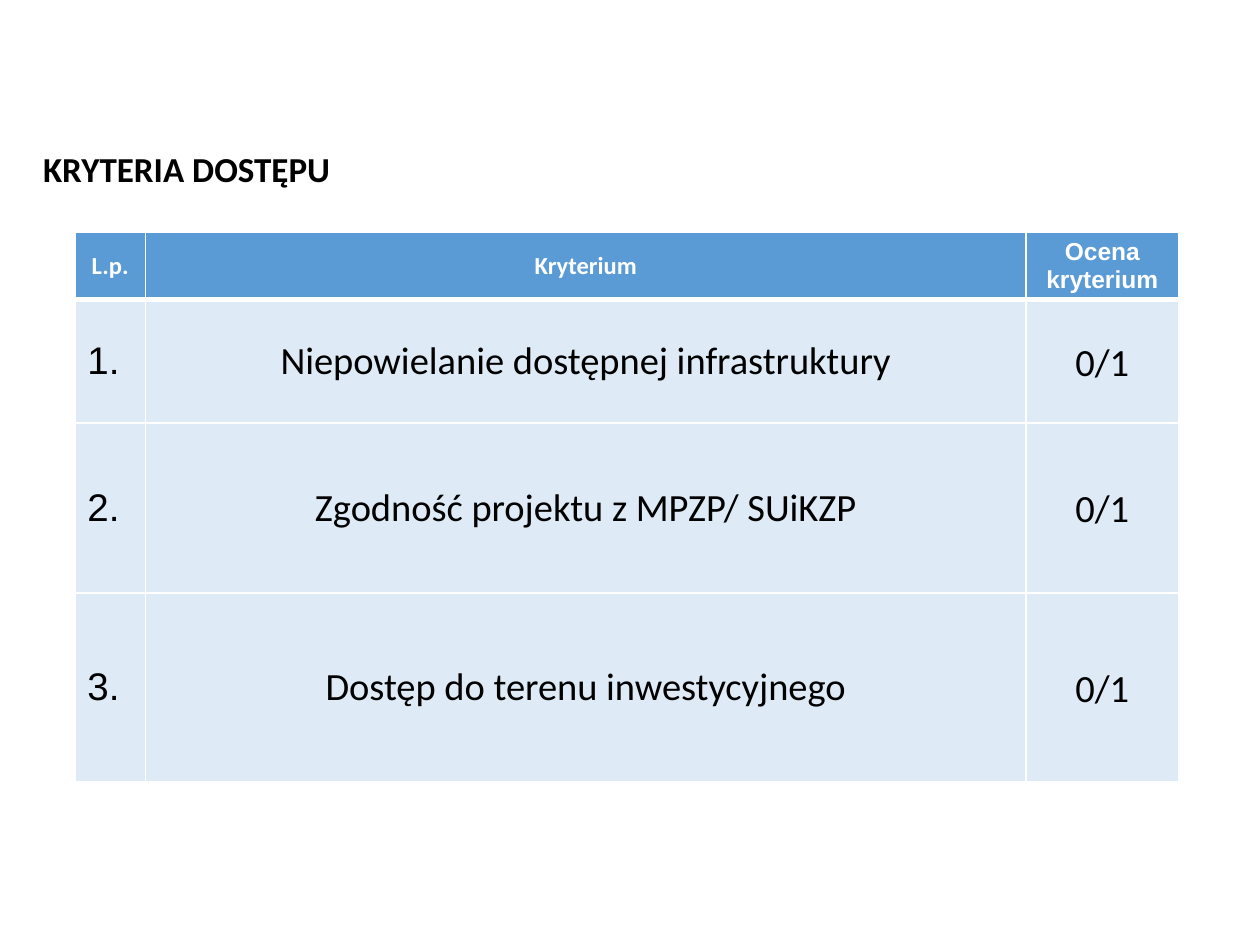
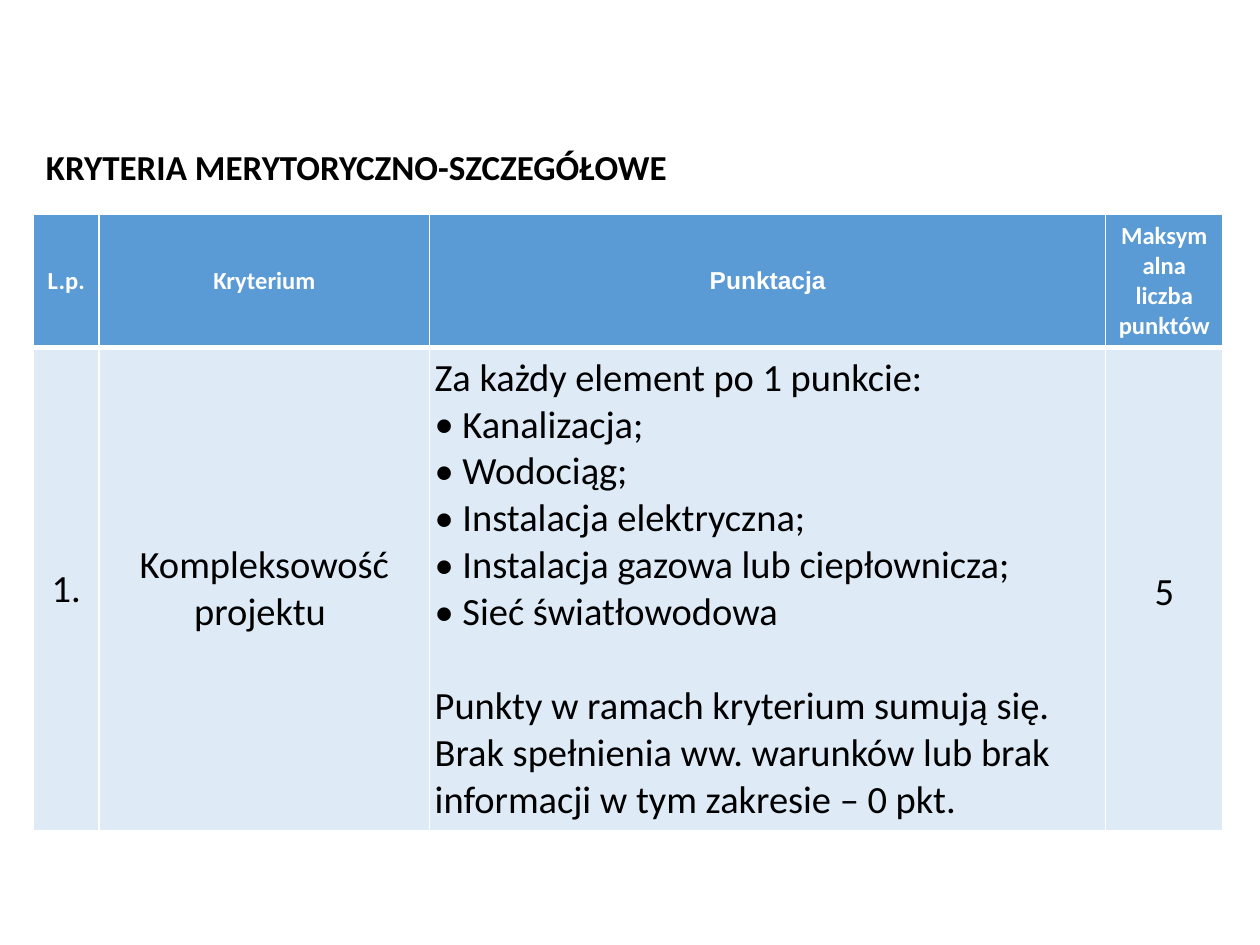
from dataclasses import dataclass

from lxml.etree import SubElement
from pptx import Presentation
from pptx.dml.color import RGBColor
from pptx.enum.text import MSO_ANCHOR as Anchor, MSO_AUTO_SIZE as AutoSize, PP_ALIGN as Align
from pptx.oxml.ns import qn
from pptx.util import Inches, Pt

COLORS = {"text": "000000", "header": "5B9BD5", "body": "DEEBF7", "line": "FFFFFF", "heading": "FFFFFF"}
SLIDE_WIDTH, SLIDE_HEIGHT = Inches(10), Inches(7.5)
GRID_COLUMNS, GRID_ROWS = 100, 75
TITLE_SIZE, HEADING_SIZE, BODY_SIZE = 20, 14, 22
TITLE_ROWS = 4.4
TIGHT_MARGIN = 0.04
BULLET_INDENT = 0.22
BLANK_LINE = 27


@dataclass
class Line:
    text: str
    bullet: bool = False
    space_before: float = 0


@dataclass
class Column:
    width: float
    heading: str
    heading_font: str = "Calibri"
    font: str = "Calibri"
    align: Align = Align.CENTER
    tight: bool = False
    spacing: float = 1.0


@dataclass
class CriteriaSlide:
    title: str
    title_at: tuple[float, float]
    title_width: float
    title_wraps: bool
    table_at: tuple[float, float]
    columns: list[Column]
    row_heights: list[float]
    rows: list[list]


def across(columns: float) -> int:
    return round(SLIDE_WIDTH * columns / GRID_COLUMNS)


def down(rows: float) -> int:
    return round(SLIDE_HEIGHT * rows / GRID_ROWS)


def write(frame, content, *, size: float, font: str = "Calibri", color: str = "text",
          bold: bool = False, align: Align = Align.LEFT, spacing: float = 1.0) -> None:
    lines = [Line(content)] if isinstance(content, str) else content
    for index, line in enumerate(lines):
        paragraph = frame.paragraphs[0] if index == 0 else frame.add_paragraph()
        if line.bullet:
            properties = paragraph._p.get_or_add_pPr()
            properties.set("marL", str(Inches(BULLET_INDENT)))
            properties.set("indent", str(-Inches(BULLET_INDENT)))
            SubElement(properties, qn("a:buFont"), typeface=font)
            SubElement(properties, qn("a:buChar"), char="•")
        paragraph.alignment = align
        paragraph.line_spacing = spacing
        if line.space_before:
            paragraph.space_before = Pt(line.space_before)
        run = paragraph.add_run()
        run.text = line.text
        run.font.size = Pt(size)
        run.font.name = font
        run.font.bold = bold
        run.font.color.rgb = RGBColor.from_string(COLORS[color])


def format_cell(cell, fill: str, bottom: float, top: float) -> None:
    properties = cell._tc.get_or_add_tcPr()
    for side, width in (("L", 1), ("R", 1), ("T", top), ("B", bottom)):
        border = SubElement(properties, qn(f"a:ln{side}"), w=str(Pt(width)))
        SubElement(SubElement(border, qn("a:solidFill")), qn("a:srgbClr"), val=COLORS["line"])
    cell.fill.solid()
    cell.fill.fore_color.rgb = RGBColor.from_string(COLORS[fill])
    cell.vertical_anchor = Anchor.MIDDLE


def add_title(slide, criteria: CriteriaSlide) -> None:
    left, top = criteria.title_at
    box = slide.shapes.add_textbox(across(left), down(top), across(criteria.title_width), down(TITLE_ROWS))
    frame = box.text_frame
    frame.word_wrap = criteria.title_wraps
    frame.auto_size = AutoSize.SHAPE_TO_FIT_TEXT
    frame.vertical_anchor = Anchor.MIDDLE
    write(frame, criteria.title, size=TITLE_SIZE, bold=True)


def add_criteria_table(slide, criteria: CriteriaSlide) -> None:
    left, top = criteria.table_at
    columns, heights = criteria.columns, criteria.row_heights
    table = slide.shapes.add_table(
        len(heights), len(columns), across(left), down(top),
        across(sum(column.width for column in columns)), down(sum(heights)),
    ).table
    table.horz_banding = False
    for row, height in zip(table.rows, heights):
        row.height = down(height)
    for index, column in enumerate(columns):
        table.columns[index].width = across(column.width)
        heading = table.cell(0, index)
        format_cell(heading, "header", bottom=3, top=1)
        write(heading.text_frame, column.heading, size=HEADING_SIZE, font=column.heading_font,
              color="heading", bold=True, align=Align.CENTER)
        for number, values in enumerate(criteria.rows, start=1):
            cell = table.cell(number, index)
            format_cell(cell, "body", bottom=1, top=3 if number == 1 else 1)
            if column.tight:
                cell.margin_left = cell.margin_right = Inches(TIGHT_MARGIN)
                cell.margin_top = cell.margin_bottom = Inches(TIGHT_MARGIN)
            write(cell.text_frame, values[index], size=BODY_SIZE, font=column.font,
                  align=column.align, spacing=column.spacing)


ACCESS = CriteriaSlide(
    title="KRYTERIA DOSTĘPU",
    title_at=(2.44, 11.2),
    title_width=37,
    title_wraps=True,
    table_at=(5.94, 18.4),
    columns=[
        Column(5.6, "L.p.", font="Arial", align=Align.LEFT),
        Column(69.9, "Kryterium"),
        Column(12.1, "Ocena kryterium", heading_font="Arial", tight=True, spacing=1.07),
    ],
    row_heights=[5.3, 9.8, 13.5, 15],
    rows=[
        [f"{number}.", name, "0/1"]
        for number, name in enumerate((
            "Niepowielanie dostępnej infrastruktury",
            "Zgodność projektu z MPZP/ SUiKZP",
            "Dostęp do terenu inwestycyjnego",
        ), start=1)
    ],
)

SCORING = [
    Line("Za każdy element po 1 punkcie:"),
    *(Line(element, bullet=True) for element in (
        "Kanalizacja;",
        "Wodociąg;",
        "Instalacja elektryczna;",
        "Instalacja gazowa lub ciepłownicza;",
        "Sieć światłowodowa",
    )),
    Line("Punkty w ramach kryterium sumują się.", space_before=BLANK_LINE),
    Line("Brak spełnienia ww. warunków lub brak informacji w tym zakresie – 0 pkt."),
]

DETAILED = CriteriaSlide(
    title="KRYTERIA MERYTORYCZNO-SZCZEGÓŁOWE",
    title_at=(2.66, 11),
    title_width=51.7,
    title_wraps=False,
    table_at=(2.66, 17),
    columns=[
        Column(5.2, "L.p."),
        Column(26.25, "Kryterium"),
        Column(53.65, "Punktacja", heading_font="Arial", align=Align.LEFT, tight=True),
        Column(9.3, "Maksymalna liczba punktów", tight=True, spacing=1.15),
    ],
    row_heights=[10.6, 38.3],
    rows=[["1.", "Kompleksowość projektu ", SCORING, "5"]],
)


def main() -> None:
    presentation = Presentation()
    presentation.slide_width, presentation.slide_height = SLIDE_WIDTH, SLIDE_HEIGHT
    for criteria in (ACCESS, DETAILED):
        slide = presentation.slides.add_slide(presentation.slide_layouts[6])
        add_criteria_table(slide, criteria)
        add_title(slide, criteria)
    presentation.save("out.pptx")


if __name__ == "__main__":
    main()
